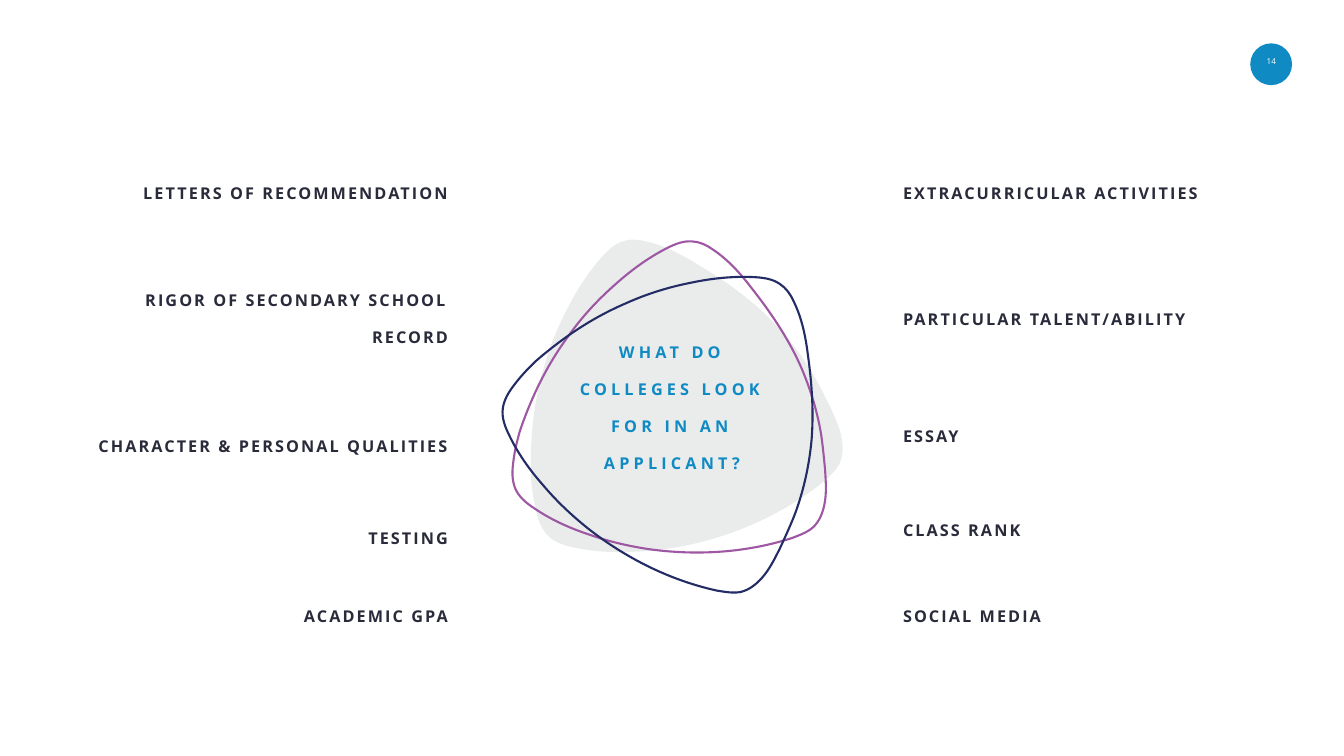
from pptx import Presentation
from pptx.dml.color import RGBColor
from pptx.enum.shapes import MSO_SHAPE
from pptx.enum.text import MSO_ANCHOR, MSO_AUTO_SIZE, PP_ALIGN
from pptx.oxml.ns import qn
from pptx.util import Inches, Pt
from lxml import etree
from math import cos, radians, sin

FONT = "Open Sans"
BLUE, INK, GREY, PURPLE, NAVY = "0F8AC3", "292B3A", "EAECEC", "9E57A3", "232C64"
RAISE = 55000

BLOB_ANGLE = 45
BLOB_CENTER = (13.035, 8.44)
BLOB = [
    (11.97, 5.07),
    (12.08, 4.95), (12.2, 4.84), (12.36, 4.79),
    (12.5, 4.74), (12.66, 4.75), (12.81, 4.79),
    (13.17, 4.87), (13.5, 5.04), (13.81, 5.23),
    (14.3, 5.52), (14.78, 5.85), (15.2, 6.25),
    (15.56, 6.6), (15.88, 7), (16.13, 7.42),
    (16.25, 7.63), (16.36, 7.85), (16.47, 8.07),
    (16.56, 8.27), (16.66, 8.47), (16.7, 8.7),
    (16.73, 8.87), (16.73, 9.04), (16.66, 9.2),
    (16.59, 9.34), (16.46, 9.45), (16.34, 9.56),
    (15.6, 10.16), (14.71, 10.57), (13.78, 10.79),
    (13.38, 10.88), (12.97, 10.94), (12.56, 10.95),
    (12.16, 10.97), (11.76, 10.95), (11.37, 10.86),
    (11.18, 10.82), (10.99, 10.76), (10.86, 10.62),
    (10.75, 10.5), (10.69, 10.35), (10.65, 10.19),
    (10.59, 9.97), (10.56, 9.75), (10.54, 9.53),
    (10.53, 9.3), (10.53, 9.07), (10.54, 8.84),
    (10.56, 8.36), (10.63, 7.88), (10.76, 7.41),
    (10.87, 6.98), (11.03, 6.57), (11.23, 6.18),
    (11.43, 5.78), (11.67, 5.4), (11.97, 5.07),
]

LEFT_LABELS = [
    ("LETTERS OF RECOMMENDATION", 3.27, 6.26, 1.46),
    ("RIGOR OF SECONDARY SCHOOL RECORD", 5.43, 6.15, 2.13),
    ("CHARACTER & PERSONAL QUALITIES", 8.3, 7.43, 1.46),
    ("TESTING", 10.46, 3.93, 0.79),
    ("ACADEMIC GPA", 12.01, 5.91, 0.79),
]
RIGHT_LABELS = [
    ("EXTRACURRICULAR ACTIVITIES", 3.27, 6.55, 1.46),
    ("PARTICULAR TALENT/ABILITY", 5.77, 5.73, 1.46),
    ("ESSAY", 8.44, 5.73, 0.79),
    ("CLASS RANK", 10.29, 5.73, 0.79),
    ("SOCIAL MEDIA", 12.01, 5.73, 0.79),
]


def color(hex_value):
    return RGBColor.from_string(hex_value)


def add_text(s, text, x, y, w, h, ink, align, size=40, bold=True, spacing=3,
             anchor=MSO_ANCHOR.MIDDLE):
    tf = s.shapes.add_textbox(Inches(x), Inches(y), Inches(w), Inches(h)).text_frame
    tf.word_wrap = True
    tf.auto_size = MSO_AUTO_SIZE.SHAPE_TO_FIT_TEXT
    tf.vertical_anchor = anchor
    tf.margin_left = tf.margin_right = tf.margin_top = tf.margin_bottom = Inches(0.06)
    tf.text = text
    p = tf.paragraphs[0]
    p.alignment = align
    r = p.runs[0]
    r.font.name, r.font.size, r.font.bold = FONT, Pt(size), bold
    r.font.color.rgb = color(ink)
    props = r._r.get_or_add_rPr()
    props.set("baseline", str(RAISE))
    if spacing:
        props.set("spc", str(spacing * 100))


def page_number(s, x, y, size):
    sp = s.shapes.add_shape(MSO_SHAPE.OVAL, Inches(x), Inches(y), Inches(size), Inches(size))
    sp.shadow.inherit = False
    sp.fill.solid()
    sp.fill.fore_color.rgb = color(BLUE)
    sp.line.fill.background()
    add_text(s, "14", x - 0.05, y + 0.19, 0.94, 0.49, "FFFFFF", PP_ALIGN.CENTER,
             20, False, 0, MSO_ANCHOR.TOP)


def upright(point):
    cx, cy = BLOB_CENTER
    dx, dy = point[0] - cx, point[1] - cy
    c, n = cos(radians(BLOB_ANGLE)), sin(radians(BLOB_ANGLE))
    return Inches(cx + c * dx + n * dy), Inches(cy - n * dx + c * dy)


def curve_segments(sp):
    lines = list(sp._element.iter(qn("a:lnTo")))
    for i in range(0, len(lines), 3):
        curve = etree.Element(qn("a:cubicBezTo"))
        lines[i].addprevious(curve)
        for line in lines[i:i + 3]:
            curve.append(line[0])
            line.getparent().remove(line)


def add_blob(group, angle, fill=None, line=None):
    points = [upright(point) for point in BLOB]
    builder = group.shapes.build_freeform(*points[0])
    builder.add_line_segments(points[1:], close=True)
    sp = builder.convert_to_shape()
    curve_segments(sp)
    sp.rotation = angle
    sp.shadow.inherit = False
    if fill:
        sp.fill.solid()
        sp.fill.fore_color.rgb = color(fill)
    else:
        sp.fill.background()
    if line:
        sp.line.color.rgb = color(line)
        sp.line.width = Pt(3)
    else:
        sp.line.fill.background()


def center_emblem(s, x, y, w, h):
    group = s.shapes.add_group_shape()
    add_blob(group, BLOB_ANGLE, fill=GREY)
    add_blob(group, 66.2, line=PURPLE)
    add_blob(group, 96.4, line=NAVY)
    add_text(s, "WHAT DO COLLEGES LOOK FOR IN AN APPLICANT?", x, y, w, h, BLUE,
             PP_ALIGN.CENTER, spacing=6)


def left_column(s, right):
    for text, y, w, h in LEFT_LABELS:
        add_text(s, text, right - w, y, w, h, INK, PP_ALIGN.RIGHT)


def right_column(s, left):
    for text, y, w, h in RIGHT_LABELS:
        add_text(s, text, left, y, w, h, INK, PP_ALIGN.LEFT)


def main():
    prs = Presentation()
    prs.slide_width, prs.slide_height = Inches(26.67), Inches(15)
    s = prs.slides.add_slide(prs.slide_layouts[6])
    page_number(s, 24.81, 0.86, 0.83)
    center_emblem(s, 11.07, 6.52, 4.53, 3.48)
    left_column(s, 8.95)
    right_column(s, 17.86)
    prs.save("out.pptx")


if __name__ == "__main__":
    main()
